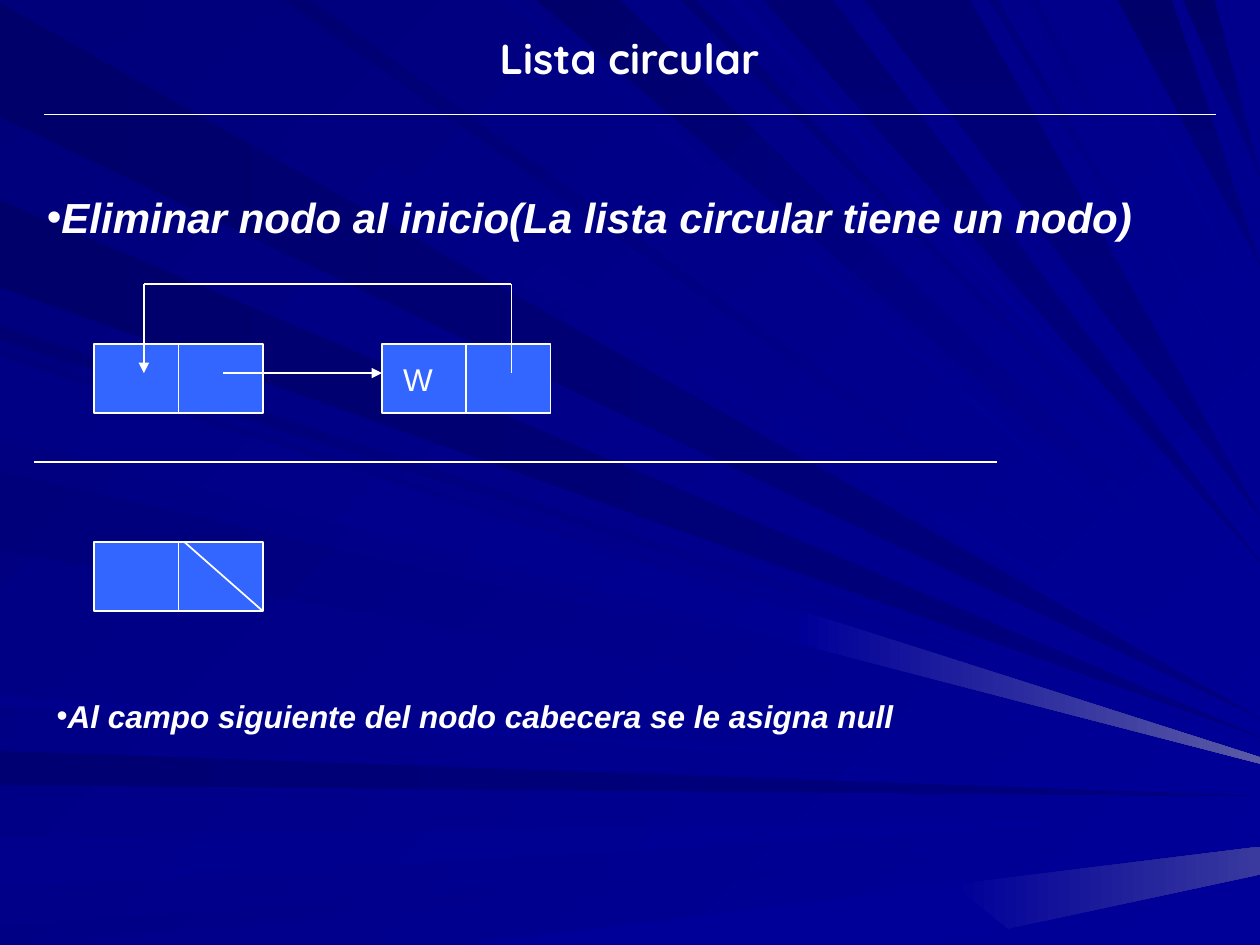
"""Build the slide on deleting the only node of a circular list."""
import pptx
import pptx.dml.color
import pptx.enum.shapes
import pptx.enum.text
import pptx.util
from lxml import etree
from pptx.oxml.ns import qn

Cm, Pt = pptx.util.Cm, pptx.util.Pt
RGB = pptx.dml.color.RGBColor.from_string
ALIGN = pptx.enum.text.PP_ALIGN

COLORS = {
    "white": "FFFFFF", "node": "3366FF", "ink": "00006B", "deep": "000073",
    "navy": "00007B", "blue": "000080", "royal": "000085", "azure": "00008C",
    "glow": "000099", "haze": "39399E", "mist": "5A5AA6",
}

RAYS = [
    ("left", "ink", "blue", 0.02, 0.93, 5.7),
    ("top", "navy", "glow", 0.26, 1.01, 5.63),
    ("left", "deep", "blue", 5.96, 6.23, 6.32),
    ("left", "azure", "glow", 6.65, 7.04, 6.47),
    ("left", "royal", "glow", 7.35, 7.5, 6.62),
    ("left", "deep", "glow", 2.58, 2.7, 5.89),
    ("left", "ink", "blue", 1.59, 2.28, 5.85),
    ("top", "royal", "glow", 3.98, 4.16, 5.18),
    ("top", "ink", "glow", 4.26, 4.92, 4.93),
    ("top", "deep", "glow", 5.4, 5.52, 4.63),
    ("top", "deep", "blue", 6.06, 6.61, 4.46),
    ("top", "ink", "blue", 8.87, 9.3, 2.1),
    ("top", "ink", "blue", 9.39, 9.64, 1.4),
    ("left", "navy", "glow", 2.78, 3.42, 6),
    ("left", "navy", "glow", 3.74, 4.37, 6.06),
    ("left", "azure", "glow", 5.52, 5.6, 6.22),
    ("top", "deep", "glow", 2.25, 2.47, 5.5),
    ("top", "azure", "glow", 5.77, 5.88, 4.54),
    ("top", "deep", "blue", 6.86, 7.7, 4.1),
    ("top", "navy", "glow", 7.85, 7.92, 3.57),
    ("top", "royal", "glow", 8.15, 8.24, 3.36),
    ("top", "azure", "glow", 8.65, 8.72, 2.54),
    ("left", "royal", "glow", 2.83, 3.47, 6.04),
]
BEAMS = [
    ("glow", "glow", [(3.64, 7.5), (7.56, 7.02), (8, 7.37), (7.42, 7.5)]),
    ("glow", "haze", [(7.56, 7.02), (10, 6.72), (10, 6.94), (8, 7.37)]),
    ("glow", "mist", [(6.37, 4.85), (10, 6.01), (10, 6.06), (6.33, 5.11)]),
]


def paint(fill, first, last=None, angle=0):
    if last is None:
        fill.solid()
        fill.fore_color.rgb = RGB(COLORS[first])
        return
    fill.gradient()
    fill.gradient_angle = (360 - angle) % 360
    for stop, name in zip(fill.gradient_stops, (first, last)):
        stop.color.rgb = RGB(COLORS[name])


def add_line(shapes, x1, y1, x2, y2, arrow=False):
    c = shapes.add_connector(pptx.enum.shapes.MSO_CONNECTOR.STRAIGHT,
                             Cm(x1), Cm(y1), Cm(x2), Cm(y2))
    c.line.width = Pt(1)
    paint(c.line.fill, "white")
    if arrow:
        etree.SubElement(c.line._get_or_add_ln(), qn("a:tailEnd"), type="triangle")
    etree.SubElement(c.element.spPr, qn("a:effectLst"))
    return c


prs = pptx.Presentation()
prs.slide_width, prs.slide_height = Cm(25.4), Cm(19.05)
s = prs.slides.add_slide(prs.slide_layouts[3])
paint(s.background.fill, "navy", "glow", 45)

polygons = []
for side, first, last, start, end, tip in RAYS:
    edge = [(0, start), (0, end)] if side == "left" else [(start, 0), (end, 0)]
    angle = 45 if last == "glow" else 0 if side == "left" else 90
    polygons.append((first, last, angle, edge + [(10, tip)]))
polygons += [(first, last, 0, points) for first, last, points in BEAMS]
for first, last, angle, points in polygons:
    corners = [(Cm(x * 2.54), Cm(y * 2.54)) for x, y in points]
    fb = s.shapes.build_freeform(*corners[0])
    fb.add_line_segments(corners[1:], close=True)
    sp = fb.convert_to_shape()
    sp.shadow.inherit = False
    sp.line.fill.background()
    paint(sp.fill, first, last, angle)

NODE_W, NODE_H = 3.4, 1.4
for x, y, label in [(1.9, 6.93, ""), (7.7, 6.93, "W"), (1.9, 10.92, "")]:
    node = s.shapes.add_group_shape()
    sp = node.shapes.add_shape(pptx.enum.shapes.MSO_SHAPE.RECTANGLE,
                               Cm(x), Cm(y), Cm(NODE_W), Cm(NODE_H))
    sp.shadow.inherit = False
    paint(sp.fill, "node")
    paint(sp.line.fill, "white")
    sp.line.width = Pt(1)
    if label:
        tf = sp.text_frame
        tf.margin_left = Cm(0.43)
        tf.vertical_anchor = pptx.enum.text.MSO_ANCHOR.MIDDLE
        p = tf.paragraphs[0]
        p.alignment = ALIGN.LEFT
        r = p.add_run()
        r.text = label
        r.font.name, r.font.size = "Arial", Pt(18)
        r.font.color.rgb = RGB(COLORS["white"])
    mid = x + NODE_W / 2
    split = add_line(node.shapes, mid, y, mid, y + NODE_H)
    split.begin_connect(sp, 0)
    split.end_connect(sp, 2)

for x1, y1, x2, y2, arrow in [
    (0.89, 2.31, 24.51, 2.31, False),
    (4.5, 7.52, 7.7, 7.52, True),
    (0.69, 9.32, 20.09, 9.32, False),
    (10.31, 7.52, 10.31, 5.72, False),
    (10.31, 5.72, 2.9, 5.72, False),
    (2.9, 5.72, 2.9, 7.52, True),
    (3.71, 10.92, 5.3, 12.32, False),
]:
    add_line(s.shapes, x1, y1, x2, y2, arrow)

TEXTS = [
    ("Lista circular", 0.69, 0.53, 24, 1.27, "Quicksand", 24, False),
    ("Eliminar nodo al inicio(La lista circular tiene un nodo)",
     0.69, 3.73, 23.8, 1.27, "Arial", 24, True),
    ("Al campo siguiente del nodo cabecera se le asigna null",
     0.89, 13.92, 22.81, 1.02, "Arial", 18, True),
]
for ph, (text, x, y, w, h, font, size, bullet) in zip(list(s.placeholders), TEXTS):
    s.shapes.element.append(ph.element)
    ph.left, ph.top, ph.width, ph.height = Cm(x), Cm(y), Cm(w), Cm(h)
    tf = ph.text_frame
    tf.word_wrap = True
    tf.auto_size = pptx.enum.text.MSO_AUTO_SIZE.SHAPE_TO_FIT_TEXT
    tf.vertical_anchor = pptx.enum.text.MSO_ANCHOR.TOP
    p = tf.paragraphs[0]
    p.alignment = ALIGN.LEFT if bullet else ALIGN.CENTER
    p.space_before = Pt(0)
    if bullet:
        pPr = p._p.get_or_add_pPr()
        pPr.set("marL", "0")
        pPr.set("indent", "0")
        etree.SubElement(pPr, qn("a:buChar"), char="•")
    r = p.add_run()
    r.text = text
    r.font.name, r.font.size = font, Pt(size)
    r.font.bold, r.font.italic = True, bullet
    r.font.color.rgb = RGB(COLORS["white"])

prs.save("out.pptx")
